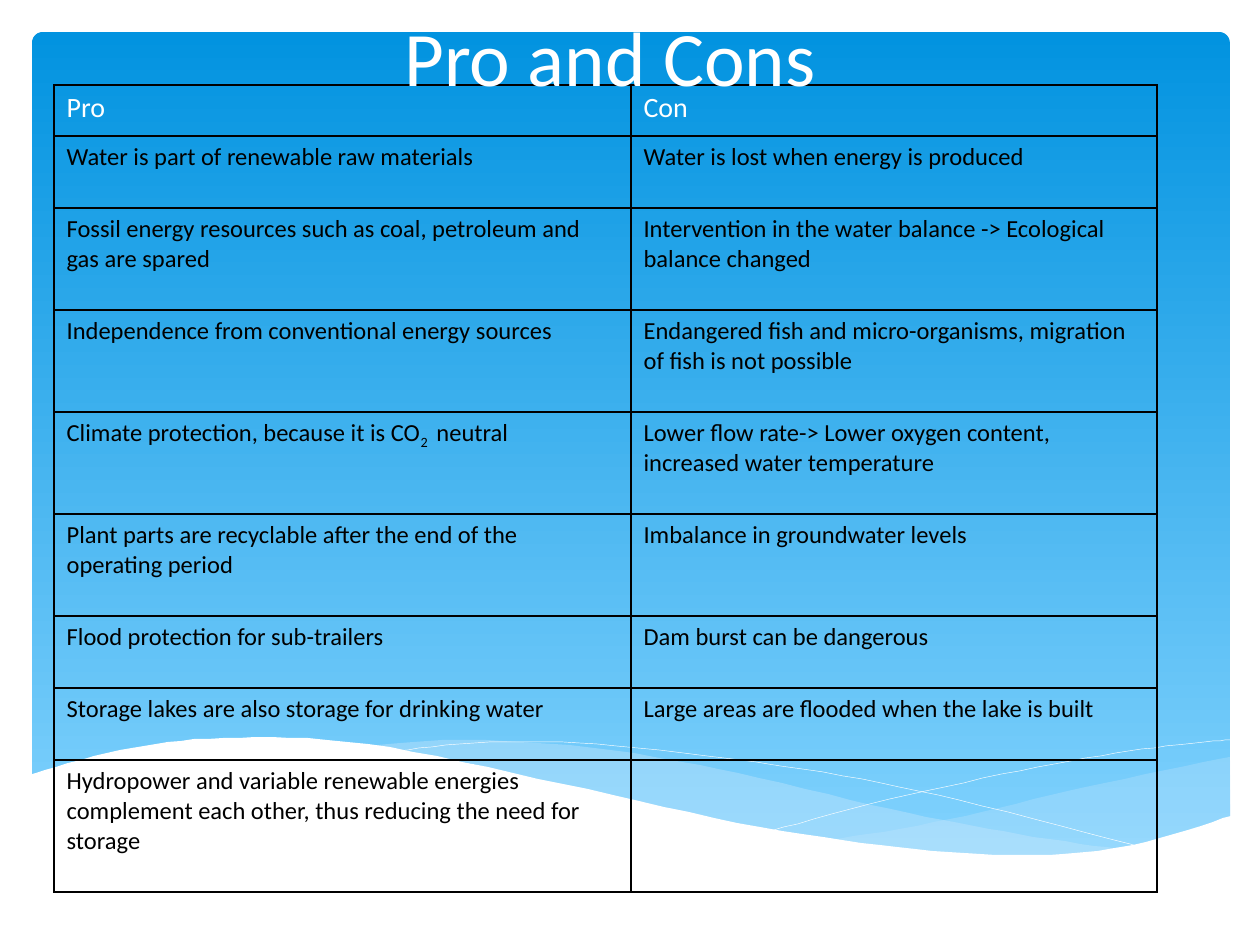
import pptx
import pptx.util
import pptx.dml.color
import pptx.enum.shapes
import pptx.enum.text
import pptx.oxml
import pptx.oxml.ns
from lxml import etree

PX = 914400 // 126
FONT = "Calibri"
WHITE, BLACK, PALE = "FFFFFF", "000000", "C6E7FC"
SKY_TOP, SKY_BOTTOM = "0293E0", "83D3FE"
STEPS = 8


def rgb(color):
    return pptx.dml.color.RGBColor.from_string(color)


def smooth(*knots):
    ends = [knots[0], *knots, knots[-1]]
    points = []
    for a, b, c, d in zip(ends, ends[1:], ends[2:], ends[3:]):
        for step in range(STEPS):
            t = step / STEPS
            points.append(tuple(
                round(q + t * (r - p) / 2 + t ** 2 * (2 * p - 5 * q + 4 * r - s) / 2
                      + t ** 3 * (3 * q - p - 3 * r + s) / 2)
                for p, q, r, s in zip(a, b, c, d)))
    return points + [knots[-1]]


prs = pptx.Presentation()
prs.slide_width = pptx.util.Inches(10)
prs.slide_height = pptx.util.Inches(7.5)
s = prs.slides.add_slide(prs.slide_layouts[5])

panel = s.shapes.add_shape(pptx.enum.shapes.MSO_SHAPE.ROUNDED_RECTANGLE, 32 * PX, 32 * PX, 1198 * PX, 832 * PX)
panel.adjustments[0] = 0.013
panel.shadow.inherit = False
panel.line.fill.background()
panel.fill.gradient()
panel.fill.gradient_angle = 270
for stop, color in zip(panel.fill.gradient_stops, (SKY_TOP, SKY_BOTTOM)):
    stop.color.rgb = rgb(color)

right_wave = (smooth((1230, 757), (1086, 787), (950, 819), (834, 840))
              + smooth((834, 840), (940, 853), (1053, 856), (1143, 845), (1231, 818)))
middle_wave = (smooth((362, 747), (456, 740), (586, 747), (718, 769), (891, 809), (1018, 834), (1126, 850))
               + smooth((1126, 850), (1032, 857), (911, 852), (758, 828), (567, 786), (457, 761), (362, 747)))
white_wave = (smooth((1231, 816), (1133, 845), (1037, 855), (915, 849), (760, 827), (563, 784),
                     (368, 744), (223, 738), (120, 750), (29, 775))
              + [(29, 921), (1231, 921)])
falling_line = smooth((391, 752), (489, 742), (616, 746), (802, 769), (959, 800), (1144, 848))
rising_line = smooth((774, 830), (908, 795), (1055, 764), (1166, 746), (1230, 740))

for points, fill, opacity in (
    (right_wave, PALE, 29),
    (middle_wave, PALE, 40),
    (falling_line, None, 100),
    (rising_line, None, 100),
    (white_wave, WHITE, 100),
):
    fb = s.shapes.build_freeform(*points[0], scale=PX)
    fb.add_line_segments(points[1:], close=fill is not None)
    sp = fb.convert_to_shape()
    sp.shadow.inherit = False
    if fill is None:
        sp.fill.background()
        sp.line.color.rgb = rgb(WHITE)
        sp.line.width = pptx.util.Pt(0.25)
    else:
        sp.line.fill.background()
        sp.fill.solid()
        sp.fill.fore_color.rgb = rgb(fill)
        if opacity < 100:
            clr = sp.element.spPr.find(".//" + pptx.oxml.ns.qn("a:srgbClr"))
            etree.SubElement(clr, pptx.oxml.ns.qn("a:alpha"), val=str(opacity * 1000))

HEADER_HEIGHT, ROW_PADDING, LINE_HEIGHT = 51, 42, 30
COLUMN_WIDTHS = (577, 526)
rows = [
    (0, "Pro", "Con"),
    (1, "Water is part of renewable raw materials", "Water is lost when energy is produced"),
    (2, "Fossil energy resources such as coal, petroleum and gas are spared",
     "Intervention in the water balance -> Ecological balance changed"),
    (2, "Independence from conventional energy sources",
     "Endangered fish and micro-organisms, migration of fish is not possible"),
    (2, "Climate protection, because it is CO|2 | neutral",
     "Lower flow rate-> Lower oxygen content, increased water temperature"),
    (2, "Plant parts are recyclable after the end of the operating period", "Imbalance in groundwater levels"),
    (1, "Flood protection for sub-trailers", "Dam burst can be dangerous"),
    (1, "Storage lakes are also storage for drinking water", "Large areas are flooded when the lake is built"),
    (3, "Hydropower and variable renewable energies complement each other, thus reducing the need for storage", ""),
]
heights = [ROW_PADDING + LINE_HEIGHT * lines if lines else HEADER_HEIGHT for lines, *texts in rows]
tbl = s.shapes.add_table(len(rows), len(COLUMN_WIDTHS), 54 * PX, 85 * PX,
                         sum(COLUMN_WIDTHS) * PX, sum(heights) * PX).table
tbl.first_row = False
tbl.horz_banding = False
for column, width in zip(tbl.columns, COLUMN_WIDTHS):
    column.width = width * PX

for i, (lines, *texts) in enumerate(rows):
    tbl.rows[i].height = heights[i] * PX
    size, color = (14, BLACK) if lines else (16, WHITE)
    for j, text in enumerate(texts):
        cell = tbl.cell(i, j)
        tcPr = cell._tc.get_or_add_tcPr()
        for edge in ("lnL", "lnR", "lnT", "lnB"):
            tcPr.append(pptx.oxml.parse_xml(
                f'<a:{edge} {pptx.oxml.ns.nsdecls("a")} w="12700"><a:solidFill>'
                f'<a:srgbClr val="{BLACK}"/></a:solidFill></a:{edge}>'))
        cell.fill.background()
        if not text:
            continue
        p = cell.text_frame.paragraphs[0]
        for k, part in enumerate(text.split("|")):
            r = p.add_run()
            r.text = part
            r.font.name = FONT
            r.font.size = pptx.util.Pt(size)
            r.font.color.rgb = rgb(color)
            is_subscript = k == 1
            if is_subscript:
                r._r.get_or_add_rPr().set("baseline", "-25000")

title = s.shapes.title
title.left, title.top, title.width, title.height = 392 * PX, 3 * PX, 662 * PX, 106 * PX
tf = title.text_frame
tf.text = "Pro and Cons"
tf.word_wrap = True
tf.auto_size = pptx.enum.text.MSO_AUTO_SIZE.NONE
tf.vertical_anchor = pptx.enum.text.MSO_ANCHOR.TOP
p = tf.paragraphs[0]
p.alignment = pptx.enum.text.PP_ALIGN.LEFT
r = p.runs[0]
r.font.name = FONT
r.font.size = pptx.util.Pt(44)
r.font.color.rgb = rgb(WHITE)
title.element.getparent().append(title.element)

prs.save("out.pptx")
